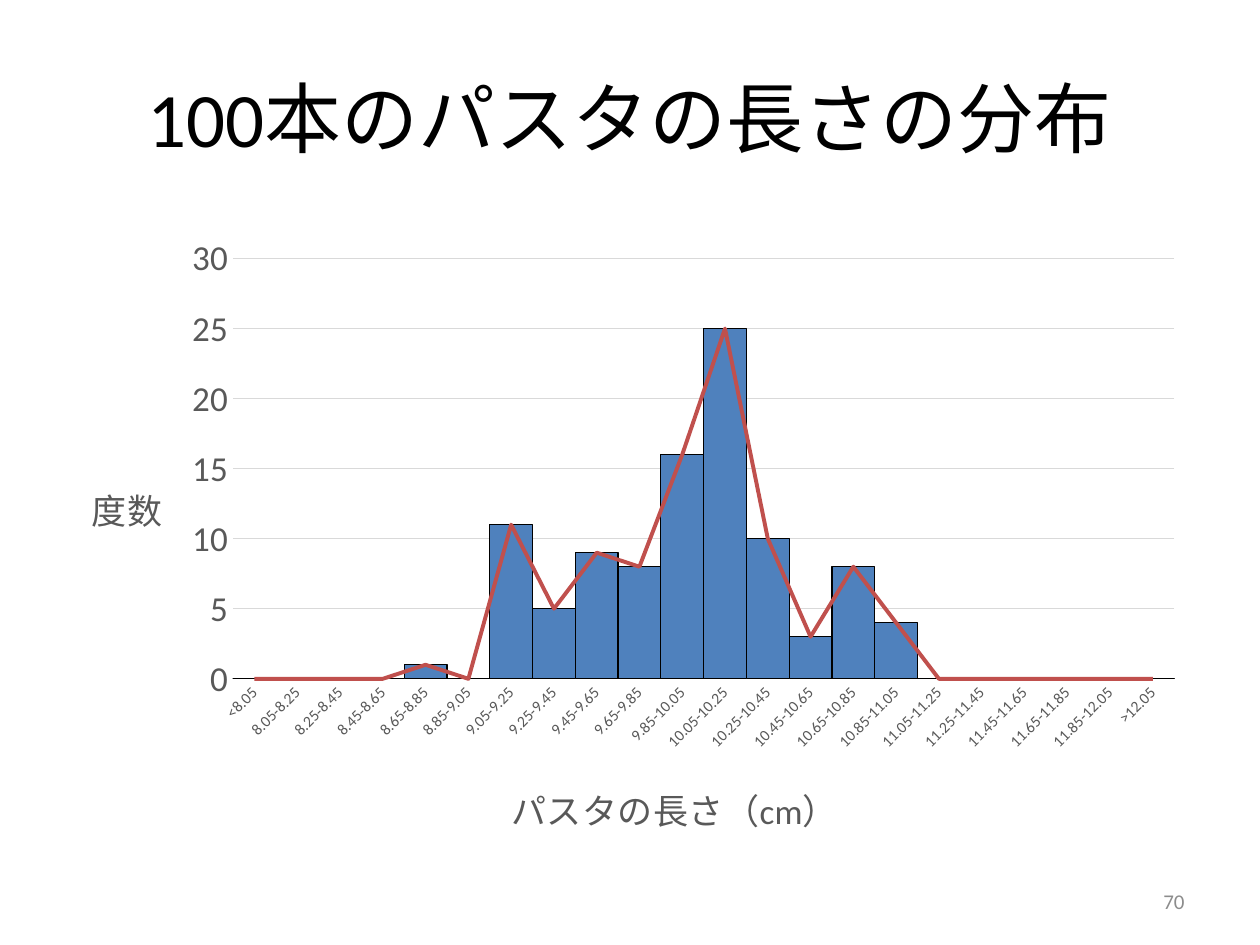
from dataclasses import dataclass

from pptx import Presentation
from pptx import util as u
from pptx.chart import data
from pptx.dml.color import RGBColor
from pptx.enum import chart as ch, text
from pptx.oxml import parse_xml
from pptx.oxml.ns import nsdecls, qn


@dataclass(frozen=True)
class Theme:
    """Colours, font and type sizes of the slide."""
    font: str = "Calibri"
    ink: str = "000000"
    label: str = "595959"
    number: str = "8C8C8C"
    grid: str = "D9D9D9"
    bar: str = "4F81BD"
    curve: str = "C0504D"
    title_size: int = 44
    axis_size: int = 20
    class_size: int = 9
    number_size: int = 12
    hairline: float = 0.75
    curve_width: float = 2.25


THEME = Theme()
EDGES = [f"{8.05 + 0.2 * i:.2f}" for i in range(21)]
CLASSES = [f"<{EDGES[0]}", *map("-".join, zip(EDGES, EDGES[1:])), f">{EDGES[-1]}"]
COUNTS = [0, 0, 0, 0, 1, 0, 11, 5, 9, 8, 16, 25, 10, 3, 8, 4, 0, 0, 0, 0, 0, 0]


def style_font(font, size, color):
    """Apply the theme font with a size and colour."""
    font.name = THEME.font
    font.size = u.Pt(size)
    font.bold = False
    font.color.rgb = RGBColor.from_string(color)


def style_line(line, color, width):
    """Give a line a solid colour and a width."""
    line.color.rgb = RGBColor.from_string(color)
    line.width = u.Pt(width)


def add_label(slide, box, words, size, color, align):
    """Add a vertically centred line of text in the box."""
    tf = slide.shapes.add_textbox(*map(u.Inches, box)).text_frame
    tf.word_wrap = True
    tf.vertical_anchor = text.MSO_ANCHOR.MIDDLE
    p = tf.paragraphs[0]
    p.text = words
    p.alignment = align
    style_font(p.runs[0].font, size, color)


def set_layout(element, **fractions):
    """Fix a chart part at fractions of the chart area."""
    for old in element.findall(qn("c:layout")):
        element.remove(old)
    target = '<c:layoutTarget val="inner"/>' if "w" in fractions else ""
    modes = "".join(f'<c:{k}Mode val="edge"/>' for k in fractions if k in "xy")
    values = "".join(f'<c:{k} val="{v}"/>' for k, v in fractions.items())
    layout = parse_xml(
        f'<c:layout {nsdecls("c")}><c:manualLayout>{target}{modes}{values}'
        "</c:manualLayout></c:layout>")
    element.insert(0 if element.find(qn("c:tx")) is None else 1, layout)


def style_axis(axis, words, size, rotation, x, y):
    """Style an axis with its labels and a horizontal title."""
    axis.major_tick_mark = axis.minor_tick_mark = ch.XL_TICK_MARK.NONE
    style_font(axis.tick_labels.font, size, THEME.label)
    labels = axis._element.find(qn("c:txPr")).find(qn("a:bodyPr"))
    labels.set("rot", str(rotation * 60000))
    labels.set("vert", "horz")
    title = axis.axis_title
    p = title.text_frame.paragraphs[0]
    p.text = words
    style_font(p.runs[0].font, THEME.axis_size, THEME.label)
    body = next(title._element.iter(qn("a:bodyPr")))
    body.set("rot", "0")
    body.set("vert", "horz")
    set_layout(title._element, x=x, y=y)


def move_to_line_plot(chart):
    """Move the second series to a line plot on the same axes."""
    bars = chart.plots[0]._element
    ser = bars.findall(qn("c:ser"))[1]
    for flag in ser.findall(qn("c:invertIfNegative")):
        ser.remove(flag)
    lines = parse_xml(
        f'<c:lineChart {nsdecls("c")}><c:grouping val="standard"/>'
        '<c:varyColors val="0"/><c:marker val="1"/></c:lineChart>')
    lines.insert(2, ser)
    for axis in bars.findall(qn("c:axId")):
        lines.append(parse_xml(
            f'<c:axId {nsdecls("c")} val="{axis.get("val")}"/>'))
    bars.addnext(lines)


def add_histogram(slide, box):
    """Add the histogram with its frequency polygon in the box."""
    cd = data.CategoryChartData()
    cd.categories = CLASSES
    for name in ("Series 1", "Series 2"):
        cd.add_series(name, COUNTS)
    chart = slide.shapes.add_chart(
        ch.XL_CHART_TYPE.COLUMN_CLUSTERED, *map(u.Inches, box), cd).chart
    chart.has_title = chart.has_legend = False
    style_font(chart.font, 10, THEME.ink)
    move_to_line_plot(chart)

    bars, lines = chart.plots
    bars.gap_width = 0
    bars.vary_by_categories = False
    columns, polygon = bars.series[0], lines.series[0]
    columns.format.fill.solid()
    columns.format.fill.fore_color.rgb = RGBColor.from_string(THEME.bar)
    style_line(columns.format.line, THEME.ink, THEME.hairline)
    style_line(polygon.format.line, THEME.curve, THEME.curve_width)
    polygon.marker.style = ch.XL_MARKER_STYLE.NONE
    polygon.smooth = False

    cat, val = chart.category_axis, chart.value_axis
    style_axis(cat, "パスタの長さ（cm）", THEME.class_size, -45, 0.39, 0.88)
    style_axis(val, "度数", THEME.axis_size, 0, 0.02, 0.4)
    style_line(cat.format.line, THEME.grid, THEME.hairline)
    val.format.line.fill.background()
    val.minimum_scale, val.maximum_scale, val.major_unit = 0, 30, 5
    style_line(val.major_gridlines.format.line, THEME.grid, THEME.hairline)
    set_layout(bars._element.getparent(), x=0.15, y=0.055, w=0.83, h=0.674)


def build_slide(prs):
    """Place the title, histogram and slide number."""
    s = prs.slides.add_slide(prs.slide_layouts[6])
    add_label(s, (0.5, 0.3, 9, 1.25), "100本のパスタの長さの分布",
              THEME.title_size, THEME.ink, text.PP_ALIGN.CENTER)
    add_label(s, (7.17, 6.95, 2.33, 0.4), "70",
              THEME.number_size, THEME.number, text.PP_ALIGN.RIGHT)
    add_histogram(s, (0.5, 1.78, 9, 4.95))


def main():
    """Build and save the presentation."""
    prs = Presentation()
    prs.slide_width, prs.slide_height = u.Inches(10), u.Inches(7.5)
    build_slide(prs)
    prs.save("out.pptx")


if __name__ == "__main__":
    main()
